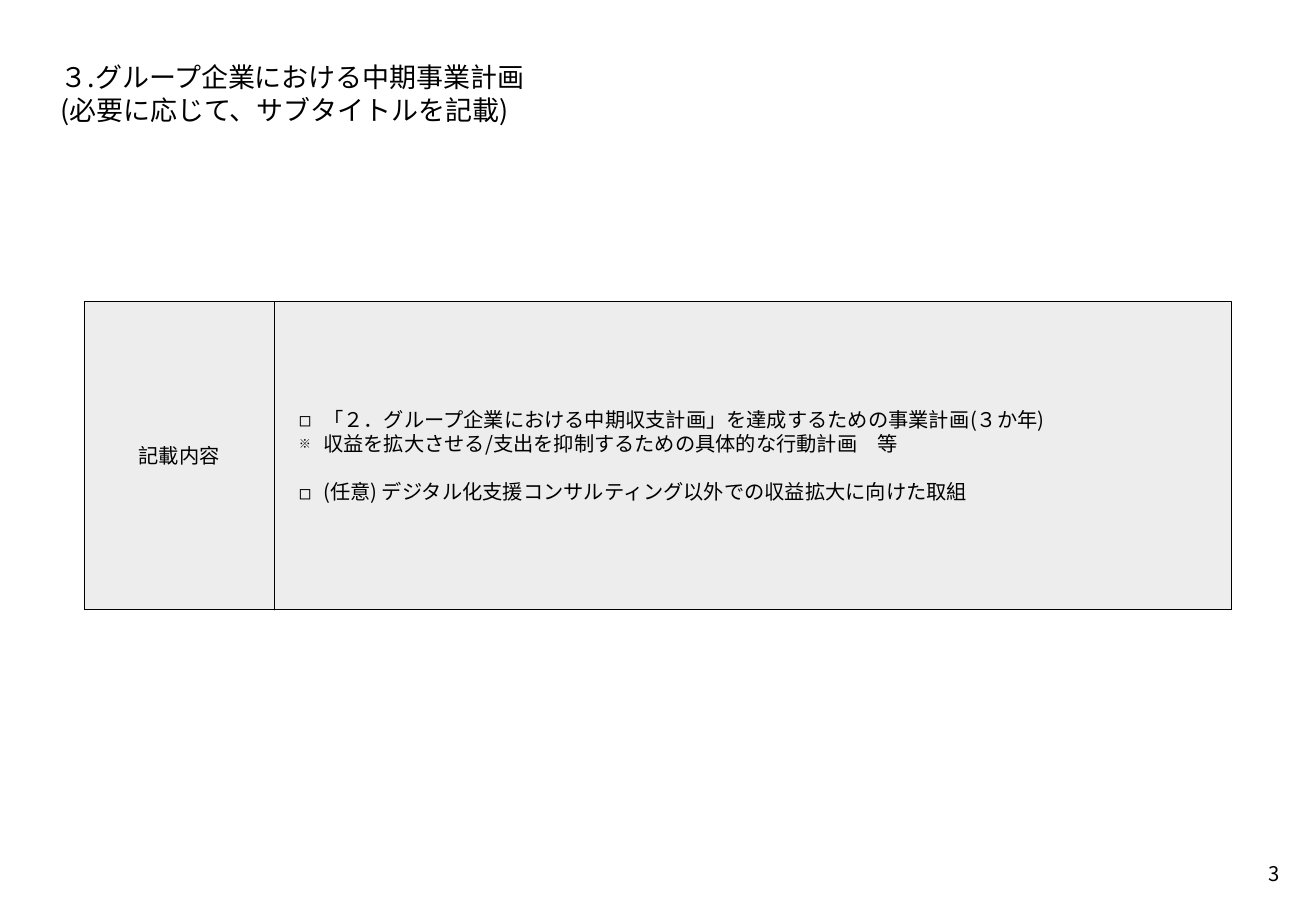
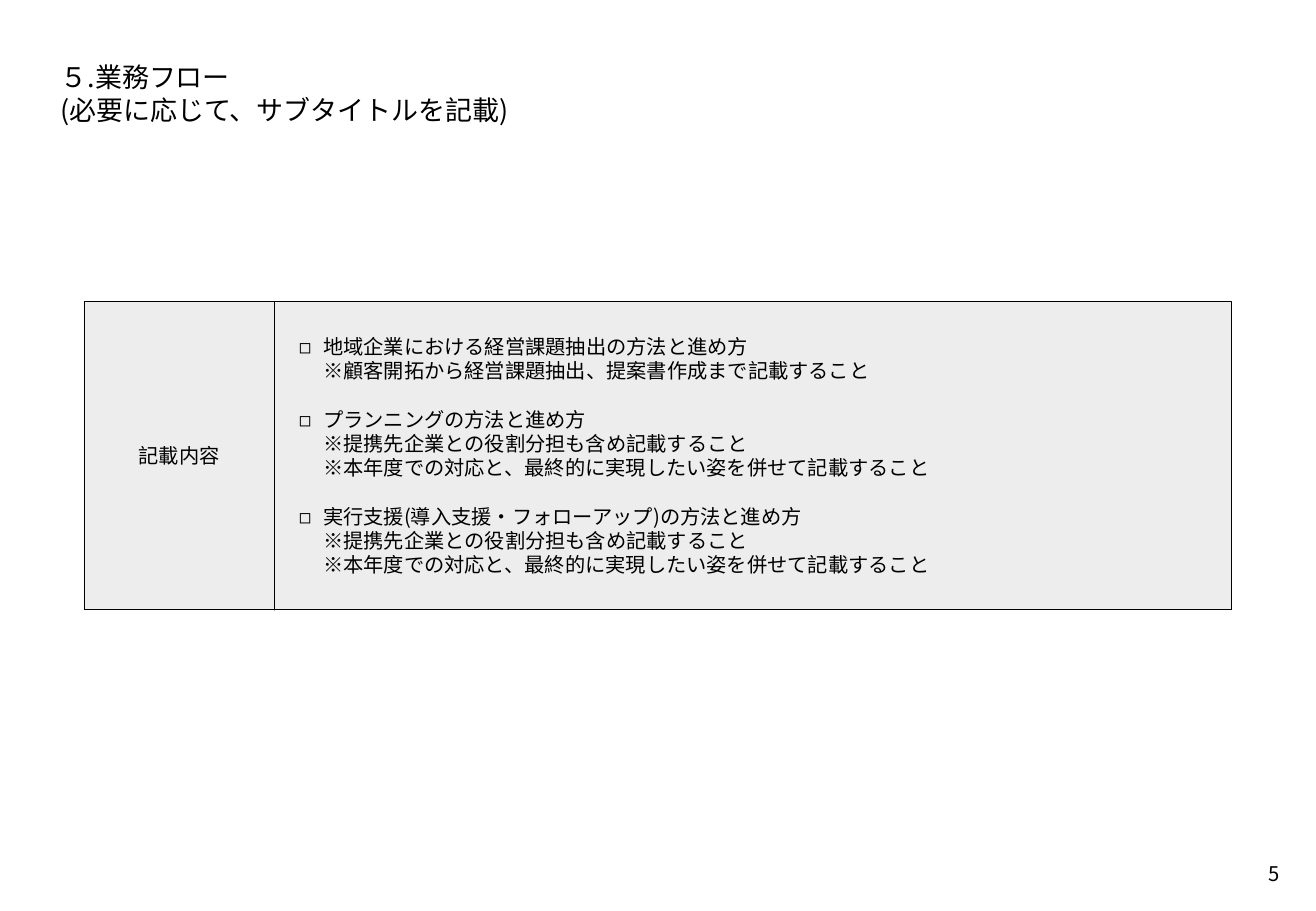
from lxml import etree
from pptx import Presentation
from pptx.dml.color import RGBColor
from pptx.enum import dml, shapes, text
from pptx.oxml import ns
from pptx.util import Inches, Pt

COLORS = {"ink": "000000", "panel": "EDEDED"}
FONT = "Noto Sans CJK JP"
TITLE_SIZE, BODY_SIZE = 16, 12
LINE_RATIO = 1.2
PANEL_LEFT, PANEL_TOP, PANEL_HEIGHT = 0.69, 2.48, 2.54
LABEL_WIDTH, CONTENT_WIDTH = 1.57, 7.87
HANGING = 0.2
BOX, NOTE = "◻", "※"
BULLET_SCALE = {BOX: 100, NOTE: 60}
SUBTITLE = "(必要に応じて、サブタイトルを記載)"
PARTNER_NOTES = (
    "\n※提携先企業との役割分担も含め記載すること"
    "\n※本年度での対応と、最終的に実現したい姿を併せて記載すること"
)

SLIDES = [
    {
        "title": "３.グループ企業における中期事業計画",
        "number": "3",
        "items": [
            (BOX, "「２．グループ企業における中期収支計画」を達成するための事業計画(３か年)"),
            (NOTE, "収益を拡大させる/支出を抑制するための具体的な行動計画　等"),
            (BOX, "(任意) デジタル化支援コンサルティング以外での収益拡大に向けた取組"),
        ],
    },
    {
        "title": "５.業務フロー",
        "number": "5",
        "items": [
            (BOX, "地域企業における経営課題抽出の方法と進め方"
                  "\n※顧客開拓から経営課題抽出、提案書作成まで記載すること"),
            (BOX, "プランニングの方法と進め方" + PARTNER_NOTES),
            (BOX, "実行支援(導入支援・フォローアップ)の方法と進め方" + PARTNER_NOTES),
        ],
    },
]


def color(name):
    return RGBColor.from_string(COLORS[name])


def write_paragraph(paragraph, content, size, alignment):
    paragraph.text = content
    paragraph.alignment = alignment
    paragraph.line_spacing = Pt(size * LINE_RATIO)
    font = paragraph.font
    font.name = FONT
    font.size = Pt(size)
    font.color.rgb = color("ink")
    defaults = paragraph._p.pPr.find(ns.qn("a:defRPr"))
    etree.SubElement(defaults, ns.qn("a:ea"), typeface=FONT)


def add_bullet(paragraph, bullet):
    properties = paragraph._p.get_or_add_pPr()
    properties.set("marL", str(Inches(HANGING)))
    properties.set("indent", str(-Inches(HANGING)))
    scale = str(BULLET_SCALE[bullet] * 1000)
    etree.SubElement(properties, ns.qn("a:buSzPct"), val=scale)
    etree.SubElement(properties, ns.qn("a:buFont"), typeface=FONT)
    etree.SubElement(properties, ns.qn("a:buChar"), char=bullet)


def format_frame(frame, inset, anchor):
    frame.word_wrap = True
    frame.auto_size = text.MSO_AUTO_SIZE.NONE
    frame.vertical_anchor = anchor
    frame.margin_left = frame.margin_right = Inches(inset)
    frame.margin_top = frame.margin_bottom = Inches(inset)


def set_title(slide, content):
    title = slide.shapes.title
    title.left, title.top = Inches(0.3), Inches(0.3)
    title.width, title.height = Inches(10.24), Inches(0.79)
    format_frame(title.text_frame, 0.2, text.MSO_ANCHOR.TOP)
    write_paragraph(title.text_frame.paragraphs[0], f"{content}\n{SUBTITLE}",
                    TITLE_SIZE, text.PP_ALIGN.LEFT)


def add_page_number(slide, number):
    box = slide.shapes.add_textbox(Inches(10.24), Inches(6.99), Inches(0.39), Inches(0.39))
    format_frame(box.text_frame, 0.1, text.MSO_ANCHOR.TOP)
    write_paragraph(box.text_frame.paragraphs[0], number, BODY_SIZE, text.PP_ALIGN.RIGHT)


def add_panel(group, left, width, inset):
    panel = group.shapes.add_shape(
        shapes.MSO_SHAPE.RECTANGLE,
        Inches(left), Inches(PANEL_TOP), Inches(width), Inches(PANEL_HEIGHT))
    panel.shadow.inherit = False
    panel.fill.solid()
    panel.fill.fore_color.rgb = color("panel")
    panel.line.color.rgb = color("ink")
    panel.line.width = Pt(0.25)
    panel.line.dash_style = dml.MSO_LINE.ROUND_DOT
    format_frame(panel.text_frame, inset, text.MSO_ANCHOR.MIDDLE)
    return panel.text_frame


def add_contents(slide, items):
    group = slide.shapes.add_group_shape()
    frame = add_panel(group, PANEL_LEFT + LABEL_WIDTH, CONTENT_WIDTH, 0.2)
    for index, (bullet, content) in enumerate(items):
        paragraph = frame.add_paragraph() if index else frame.paragraphs[0]
        add_bullet(paragraph, bullet)
        write_paragraph(paragraph, content, BODY_SIZE, text.PP_ALIGN.LEFT)
        if index and bullet == BOX:
            paragraph.space_before = Pt(BODY_SIZE * LINE_RATIO)
    label = add_panel(group, PANEL_LEFT, LABEL_WIDTH, 0.1)
    write_paragraph(label.paragraphs[0], "記載内容", BODY_SIZE, text.PP_ALIGN.CENTER)


def main():
    presentation = Presentation()
    presentation.slide_width = Inches(10.83)
    presentation.slide_height = Inches(7.5)
    title_only = presentation.slide_layouts[5]
    for content in SLIDES:
        slide = presentation.slides.add_slide(title_only)
        set_title(slide, content["title"])
        add_page_number(slide, content["number"])
        add_contents(slide, content["items"])
    presentation.save("out.pptx")


if __name__ == "__main__":
    main()
